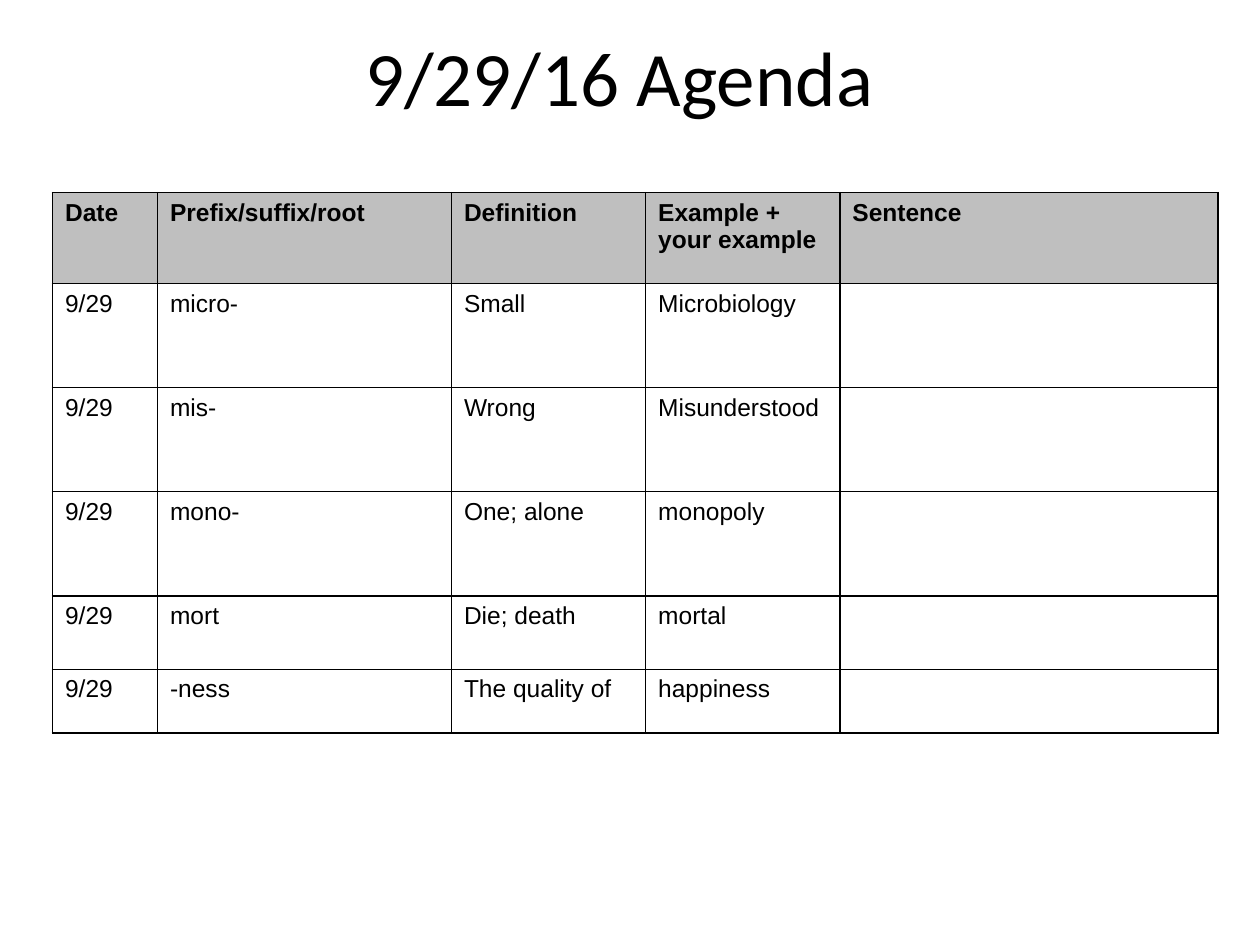
"""Build the agenda slide with its table of word parts."""
from lxml.etree import SubElement
from pptx import Presentation
from pptx.dml.color import RGBColor
from pptx.enum.text import MSO_ANCHOR, PP_ALIGN
from pptx.oxml.ns import qn
from pptx.util import Pt


def style(font, name, size, bold=False, color="000000"):
    font.name, font.size, font.bold = name, Pt(size), bold
    font.color.rgb = RGBColor.from_string(color)


def edge(cell, color="000000"):
    props = cell._tc.get_or_add_tcPr()
    for spot, side in enumerate(("lnL", "lnR", "lnT", "lnB")):
        line = SubElement(props, qn(f"a:{side}"), w=str(Pt(1)))
        fill = SubElement(line, qn("a:solidFill"))
        SubElement(fill, qn("a:srgbClr"), val=color)
        props.insert(spot, line)


deck = Presentation()
deck.slide_width, deck.slide_height = Pt(720), Pt(540)
slide = deck.slides.add_slide(deck.slide_layouts[6])

title = slide.shapes.add_textbox(Pt(48), Pt(21.5), Pt(612), Pt(44)).text_frame
title.word_wrap = True
title.vertical_anchor = MSO_ANCHOR.MIDDLE
title.text = "9/29/16 Agenda"
title.paragraphs[0].alignment = PP_ALIGN.CENTER
style(title.paragraphs[0].font, "Calibri", 44)

rows = [
    ("Date", "Prefix/suffix/root", "Definition", "Example + your example", "Sentence"),
    ("9/29", "micro-", "Small", "Microbiology", ""),
    ("9/29", "mis-", "Wrong", "Misunderstood", ""),
    ("9/29", "mono-", "One; alone", "monopoly", ""),
    ("9/29", "mort", "Die; death", "mortal", ""),
    ("9/29", "-ness", "The quality of", "happiness", ""),
]
wide = [60, 168, 111, 111, 216]
high = [52, 59.5, 59.5, 59.5, 42, 36.5]

table = slide.shapes.add_table(
    len(rows), len(wide), Pt(30), Pt(110), Pt(sum(wide)), Pt(sum(high))
).table
table.horz_banding = False
for col, width in zip(table.columns, wide):
    col.width = Pt(width)
for row, height in zip(table.rows, high):
    row.height = Pt(height)

for r, words in enumerate(rows):
    for c, word in enumerate(words):
        cell = table.cell(r, c)
        cell.text = word
        style(cell.text_frame.paragraphs[0].font, "Arial", 14, r == 0)
        if r == 0:
            cell.fill.solid()
            cell.fill.fore_color.rgb = RGBColor.from_string("BFBFBF")
        else:
            cell.fill.background()
        edge(cell)

deck.save("out.pptx")
